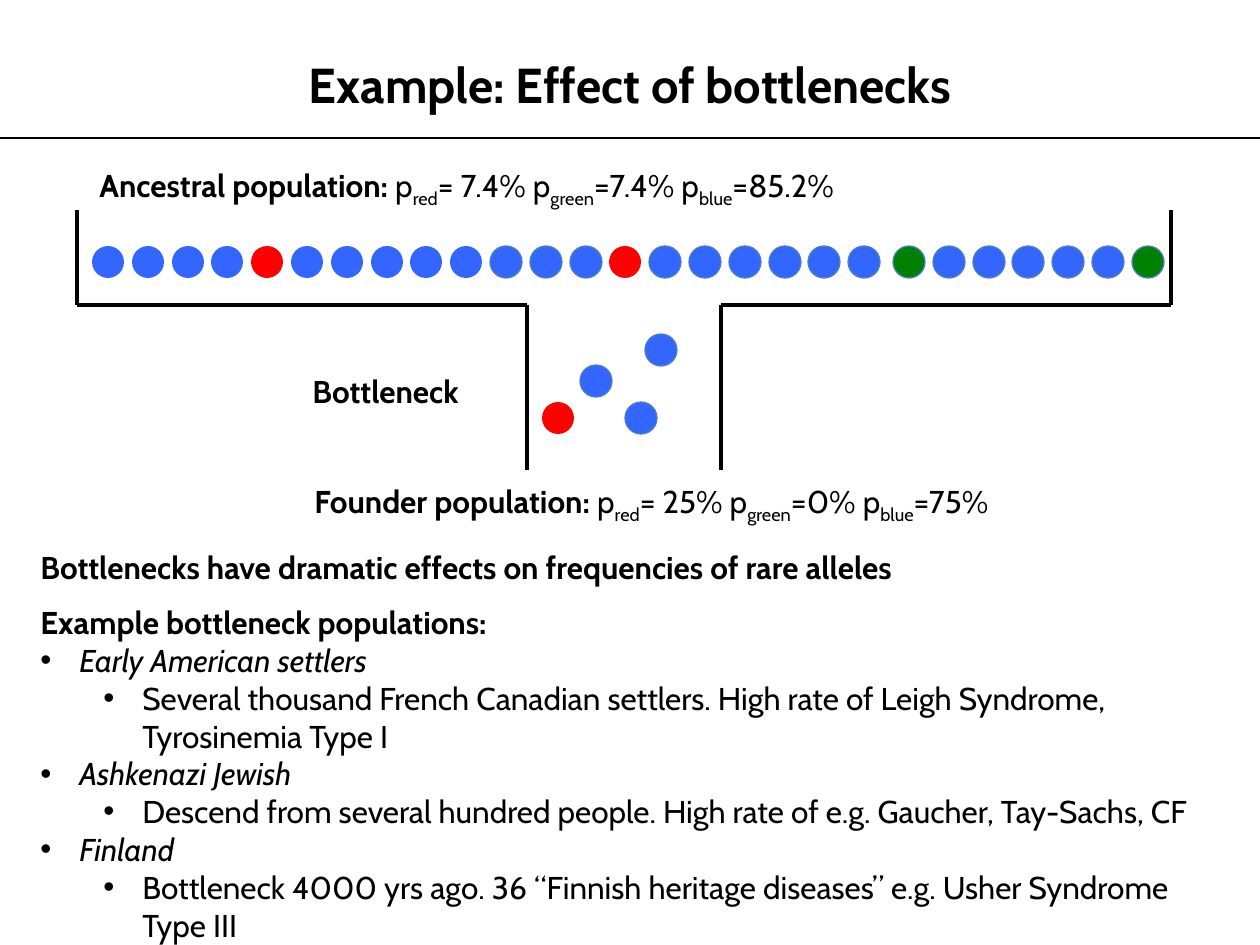
from dataclasses import dataclass
from lxml.etree import SubElement
from pptx import Presentation
from pptx.dml.color import RGBColor
from pptx.enum.shapes import MSO_CONNECTOR, MSO_SHAPE
from pptx.enum.text import MSO_AUTO_SIZE, PP_ALIGN
from pptx.oxml.ns import qn
from pptx.util import Emu, Pt

SCALE = 914400 / 126
DIAMETER = 32
COLORS = {
    "black": "000000",
    "blue": "3366FF",
    "red": "FF0000",
    "green": "008000",
    "rim": "4B7EBC",
}


@dataclass
class Span:
    text: str
    bold: bool = False
    italic: bool = False
    subscript: bool = False


@dataclass
class Para:
    spans: list[Span]
    level: int = 0
    indent: int = 0


@dataclass
class Label:
    left: int
    top: int
    width: int
    height: int
    paras: list[Para]
    size: int = 18
    wrap: bool = False
    centered: bool = False


@dataclass
class Wall:
    x1: int
    y1: int
    x2: int
    y2: int
    weight: float = 2


@dataclass
class Allele:
    left: int
    top: int
    color: str
    rim: bool


def px(length: int) -> Emu:
    return Emu(round(length * SCALE))


def rgb(name: str) -> RGBColor:
    return RGBColor.from_string(COLORS[name])


def heading(text: str) -> Para:
    return Para([Span(text, bold=True)])


def frequencies(title: str, red: str, green: str, blue: str) -> Para:
    spans = [Span(f"{title}: ", bold=True), Span("p")]
    for name, ending in (("red", f"= {red} p"), ("green", f"={green} p"), ("blue", f"={blue}")):
        spans += [Span(name, subscript=True), Span(ending)]
    return Para(spans)


def draw_wall(page, wall: Wall) -> None:
    ends = map(px, (wall.x1, wall.y1, wall.x2, wall.y2))
    line = page.shapes.add_connector(MSO_CONNECTOR.STRAIGHT, *ends)
    line.line.color.rgb = rgb("black")
    line.line.width = Pt(wall.weight)
    SubElement(line._element.spPr, qn("a:effectLst"))


def draw_allele(page, allele: Allele) -> None:
    circle = page.shapes.add_shape(
        MSO_SHAPE.OVAL, px(allele.left), px(allele.top), px(DIAMETER), px(DIAMETER))
    circle.shadow.inherit = False
    circle.fill.solid()
    circle.fill.fore_color.rgb = rgb(allele.color)
    if allele.rim:
        circle.line.color.rgb = rgb("rim")
        circle.line.width = Pt(0.75)
    else:
        circle.line.fill.background()


def add_bullet(paragraph, indent: int) -> None:
    properties = paragraph._p.get_or_add_pPr()
    properties.set("marL", str(px(indent)))
    properties.set("indent", str(px(-39)))
    SubElement(properties, qn("a:buFont"), typeface="Arial")
    SubElement(properties, qn("a:buChar"), char="•")


def draw_label(page, label: Label) -> None:
    box = page.shapes.add_textbox(
        px(label.left), px(label.top), px(label.width), px(label.height))
    frame = box.text_frame
    frame.word_wrap = label.wrap
    frame.auto_size = MSO_AUTO_SIZE.SHAPE_TO_FIT_TEXT
    for index, para in enumerate(label.paras):
        paragraph = frame.add_paragraph() if index else frame.paragraphs[0]
        paragraph.level = para.level
        paragraph.alignment = PP_ALIGN.CENTER if label.centered else PP_ALIGN.LEFT
        if para.indent:
            add_bullet(paragraph, para.indent)
        for span in para.spans:
            run = paragraph.add_run()
            run.text = span.text
            formats = {"name": "Cabin", "size": Pt(label.size),
                       "bold": span.bold, "italic": span.italic}
            for attribute, value in formats.items():
                setattr(run.font, attribute, value)
            run.font.color.rgb = rgb("black")
            if span.subscript:
                run.font._element.set("baseline", "-25000")


def ancestral_row() -> list[Allele]:
    special = {4: "red", 13: "red", 20: "green", 26: "green"}
    row = []
    for index in range(27):
        color = special.get(index, "blue")
        group_gap = 5 if index >= 20 else 0
        left = 92 + round(index * 39.8) + group_gap
        row.append(Allele(left, 246, color, index >= 10 and color != "red"))
    return row


def example_list() -> list[Para]:
    examples = {
        "Early American settlers":
            "Several thousand French Canadian settlers. High rate of Leigh Syndrome, "
            "Tyrosinemia Type I",
        "Ashkenazi Jewish":
            "Descend from several hundred people. High rate of e.g. Gaucher, Tay-Sachs, CF",
        "Finland":
            "Bottleneck 4000 yrs ago. 36 “Finnish heritage diseases” e.g. Usher Syndrome Type III",
    }
    paras = [heading("Example bottleneck populations:")]
    for group, detail in examples.items():
        paras.append(Para([Span(group, italic=True)], indent=39))
        paras.append(Para([Span(detail)], level=1, indent=102))
    return paras


WALLS = [Wall(0, 138, 1260, 138, 0.75)]
for outer, inner in ((77, 527), (1171, 721)):
    WALLS += [Wall(outer, 305, inner, 305), Wall(outer, 305, outer, 210),
              Wall(inner, 470, inner, 305)]

FOUNDERS = [
    Allele(542, 402, "red", False),
    Allele(580, 365, "blue", True),
    Allele(625, 402, "blue", True),
    Allele(645, 334, "blue", True),
]

LABELS = [
    Label(0, 48, 1260, 72, [heading("Example: Effect of bottlenecks")],
          size=28, wrap=True, centered=True),
    Label(87, 160, 823, 89, [frequencies("Ancestral population", "7.4%", "7.4%", "85.2%")]),
    Label(300, 366, 205, 50, [heading("Bottleneck")]),
    Label(302, 476, 750, 50, [frequencies("Founder population", "25%", "0%", "75%")]),
    Label(28, 542, 1050, 50,
          [heading("Bottlenecks have dramatic effects on frequencies of rare alleles")]),
    Label(28, 597, 1216, 318, example_list(), wrap=True),
]


def main() -> None:
    deck = Presentation()
    deck.slide_width, deck.slide_height = px(1260), px(945)
    page = deck.slides.add_slide(deck.slide_layouts[6])
    for wall in WALLS:
        draw_wall(page, wall)
    for allele in ancestral_row() + FOUNDERS:
        draw_allele(page, allele)
    for label in LABELS:
        draw_label(page, label)
    deck.save("out.pptx")


if __name__ == "__main__":
    main()
